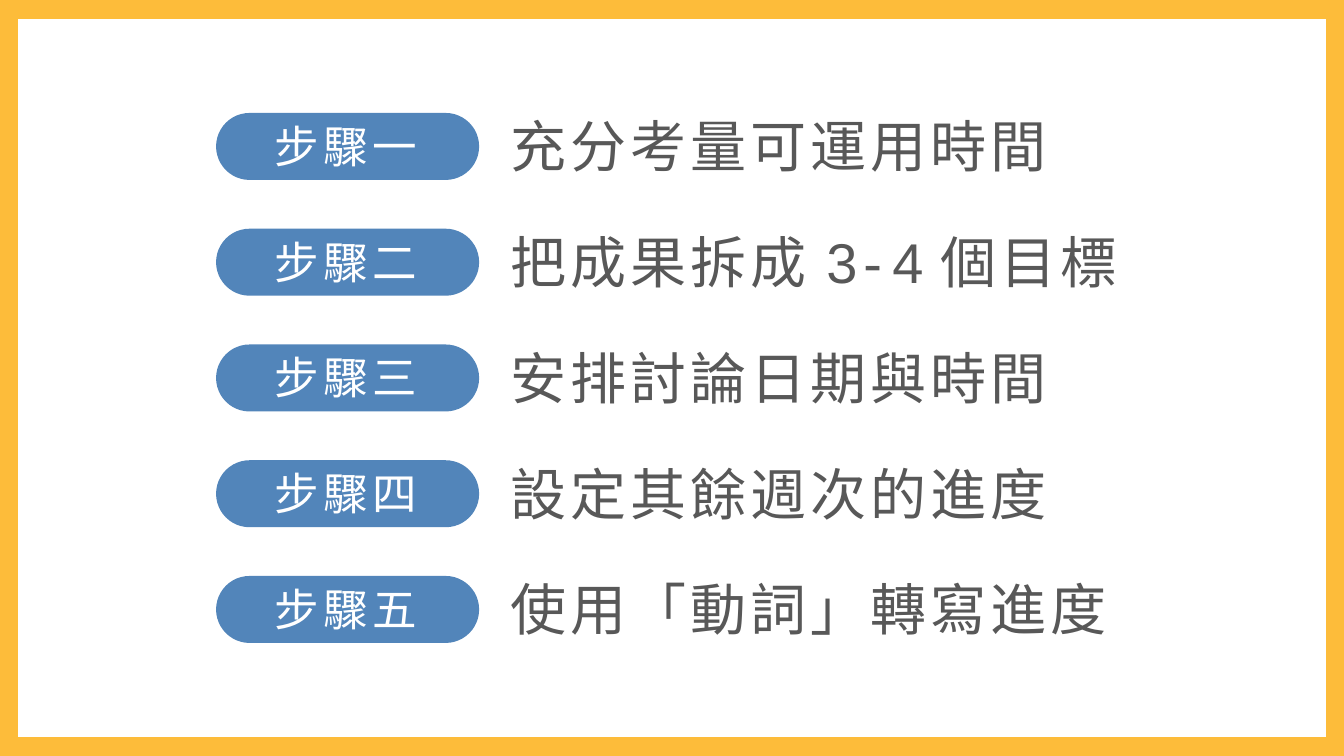
import pptx
import pptx.util
import pptx.dml.color
import pptx.enum.shapes
import pptx.enum.text
import pptx.oxml
import pptx.oxml.ns

PX = 914400 / 100.8
AMBER = pptx.dml.color.RGBColor(0xFD, 0xBC, 0x3A)
BLUE = pptx.dml.color.RGBColor(0x52, 0x85, 0xBA)
WHITE = pptx.dml.color.RGBColor(0xFF, 0xFF, 0xFF)
GREY = pptx.dml.color.RGBColor(0x58, 0x58, 0x58)
LABEL_FONT = "Noto Sans CJK JP"
BODY_FONT = "Arial"
A_NS = pptx.oxml.ns.nsdecls("a")
SHAPE = pptx.enum.shapes.MSO_SHAPE
NARROW_SPACE = (" ", -6.5)

STEPS = [
    ("步驟一", [("充分考量可運用時間", 3)]),
    ("步驟二", [("把成果拆成", 3), NARROW_SPACE, ("3", 4.2), ("-", 7.4), ("4", 1.1),
             NARROW_SPACE, ("個目標", 3)]),
    ("步驟三", [("安排討論日期與時間", 3)]),
    ("步驟四", [("設定其餘週次的進度", 3)]),
    ("步驟五", [("使用「動詞」轉寫進度", 3)]),
]


def px(n):
    return pptx.util.Emu(round(n * PX))


def box(x, y, w, h):
    return px(x), px(y), px(w), px(h)


def write(sp, runs, size, font, color, align):
    tf = sp.text_frame
    tf.word_wrap = True
    tf.margin_left = tf.margin_top = 0
    tf.margin_right = px(4)
    tf.margin_bottom = px(2)
    tf.vertical_anchor = pptx.enum.text.MSO_ANCHOR.MIDDLE
    p = tf.paragraphs[0]
    p.alignment = align
    for text, spacing in runs:
        r = p.add_run()
        r.text = text
        r.font.size = pptx.util.Pt(size)
        r.font.name = font
        r.font.color.rgb = color
        rPr = r.font._element
        rPr.set("spc", str(round(spacing * 100)))
        latin = rPr.find(pptx.oxml.ns.qn("a:latin"))
        latin.addnext(pptx.oxml.parse_xml(f'<a:ea {A_NS} typeface="{font}"/>'))


def add_frame(s, x, y, w, h):
    sp = s.shapes.add_shape(SHAPE.RECTANGLE, *box(x, y, w, h))
    sp.shadow.inherit = False
    sp.fill.background()
    sp.line.color.rgb = AMBER
    sp.line.width = pptx.util.Pt(16.5)


def add_step(s, label, runs, x, y, w, h):
    pill_w = 263
    text_x = 294
    align = pptx.enum.text.PP_ALIGN
    sp = s.shapes.add_shape(SHAPE.ROUNDED_RECTANGLE, *box(x, y, pill_w, h))
    sp.adjustments[0] = 0.5
    sp.shadow.inherit = False
    sp.fill.solid()
    sp.fill.fore_color.rgb = BLUE
    sp.line.fill.background()
    write(sp, [(label, 3.1)], 31.8, LABEL_FONT, WHITE, align.CENTER)
    sp = s.shapes.add_textbox(*box(x + text_x, y, w - text_x, h))
    write(sp, runs, 40, BODY_FONT, GREY, align.LEFT)


def add_steps(s, x, y, w, h):
    row_h = 67
    pitch = (h - row_h) / (len(STEPS) - 1)
    for i, (label, runs) in enumerate(STEPS):
        add_step(s, label, runs, x, y + i * pitch, w, row_h)


def main():
    prs = pptx.Presentation()
    prs.slide_width = pptx.util.Inches(13.33)
    prs.slide_height = pptx.util.Inches(7.5)
    s = prs.slides.add_slide(prs.slide_layouts[6])
    add_steps(s, 216, 113, 1000, 530)
    add_frame(s, 7, 7, 1330, 742)
    prs.save("out.pptx")


if __name__ == "__main__":
    main()
